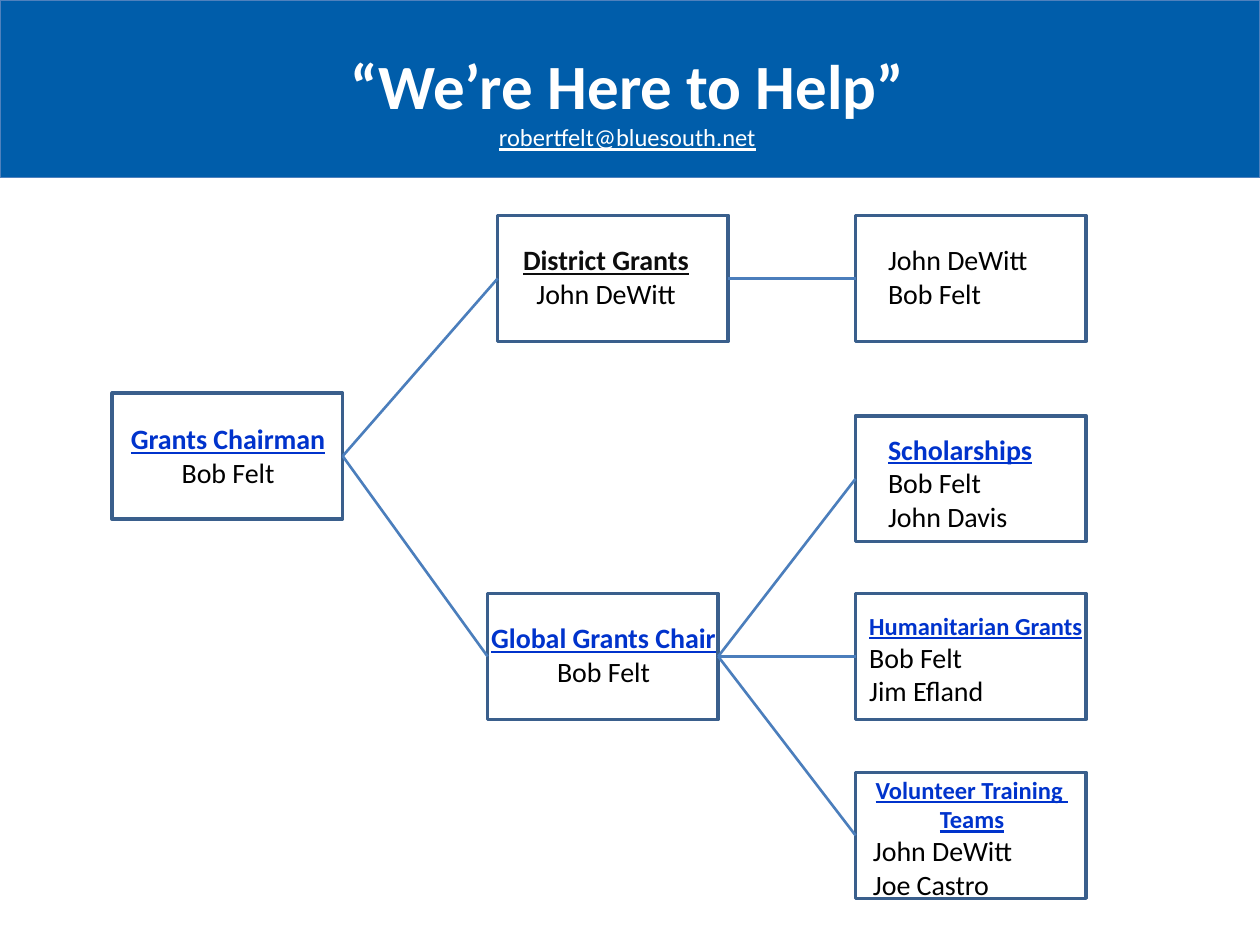
from dataclasses import dataclass

from lxml.etree import SubElement
from pptx import Presentation
from pptx.dml.color import RGBColor as Rgb
from pptx.enum.shapes import MSO_CONNECTOR as Conn, MSO_SHAPE as Shape
from pptx.enum.text import MSO_ANCHOR as Anchor, MSO_AUTO_SIZE as Fit, PP_ALIGN as Align
from pptx.oxml.ns import qn
from pptx.util import Inches, Pt


@dataclass(frozen=True)
class Theme:
    font: str = "Calibri"
    white: str = "FFFFFF"
    black: str = "000000"
    dark: str = "0D0D0D"
    link: str = "0033CC"
    band: str = "005DAA"
    rim: str = "4F81BD"
    edge: str = "3A5F8C"
    wire: str = "4B7EBC"
    title: int = 36
    body: int = 16
    small: int = 14


T = Theme()
LEFT, MID = Align.LEFT, Align.CENTER
WIDE, HIGH = 1.83, 1
RIGHT = 6.79


def write(para, text, size, color, bold=False, under=False):
    run = para.add_run()
    run.text = text
    font = run.font
    font.name, font.size = T.font, Pt(size)
    font.bold, font.underline = bold, under
    font.color.rgb = Rgb.from_string(color)


def rect(slide, box, fill, color, width):
    shape = slide.shapes.add_shape(Shape.RECTANGLE, *map(Inches, box))
    shape.shadow.inherit = False
    if fill:
        shape.fill.solid()
        shape.fill.fore_color.rgb = Rgb.from_string(fill)
    else:
        shape.fill.background()
    shape.line.color.rgb = Rgb.from_string(color)
    shape.line.width = Pt(width)
    return shape


def header(slide, box):
    x, y, w, h = box
    band = rect(slide, box, T.band, T.rim, 0.75)
    slide.shapes._spTree.insert(2, band._element)
    title = slide.shapes.title
    title.left, title.top = Inches(x + 0.48), Inches(y + 0.3)
    title.width, title.height = Inches(w - 1), Inches(1.25)
    frame = title.text_frame
    frame.auto_size = Fit.NONE
    frame.vertical_anchor = Anchor.TOP
    frame.margin_top = Inches(0.07)
    para = frame.paragraphs[0]
    para.alignment = MID
    write(para, "“We’re Here to Help”", T.title, T.white, bold=True)
    para.add_line_break()
    write(para, "robertfelt@bluesouth.net", T.small, T.white, under=True)


def label(slide, box, heads, names, size, color, aligns):
    text = slide.shapes.add_textbox(*map(Inches, box))
    frame = text.text_frame
    frame.word_wrap = False
    frame.auto_size = Fit.SHAPE_TO_FIT_TEXT
    rows = [(head, size, color, True, aligns[0]) for head in heads]
    rows += [(name, T.body, T.black, False, aligns[1]) for name in names]
    for i, (line, pts, tint, strong, align) in enumerate(rows):
        para = frame.add_paragraph() if i else frame.paragraphs[0]
        para.alignment = align
        write(para, line, pts, tint, strong, strong)


def node(slide, spot, area, heads, names, size=T.body, color=T.link, aligns=(LEFT, LEFT)):
    x, y = spot
    dx, dy, w, h = area
    shape = rect(slide, (x, y, WIDE, HIGH), None, T.edge, 2)
    label(slide, (x + dx, y + dy, w, h), heads, names, size, color, aligns)
    return shape


def join(slide, start, end):
    wire = slide.shapes.add_connector(Conn.STRAIGHT, 0, 0, 0, 0)
    wire.begin_connect(start, 3)
    wire.end_connect(end, 1)
    wire.line.color.rgb = Rgb.from_string(T.wire)
    wire.line.width = Pt(1.5)
    SubElement(wire._element.spPr, qn("a:effectLst"))


def chart(slide, box):
    x, y = box[:2]
    chair = node(slide, (x + 0.89, y + 1.71), (0.05, 0.18, 1.77, 0.64),
                 ["Grants Chairman"], ["Bob Felt"], aligns=(LEFT, MID))
    local = node(slide, (x + 3.95, y + 0.3), (0.09, 0.17, 1.54, 0.64),
                 ["District Grants"], ["John DeWitt"], color=T.dark, aligns=(MID, MID))
    world = node(slide, (x + 3.87, y + 3.3), (-0.07, 0.17, 2.01, 0.64),
                 ["Global Grants Chair"], ["Bob Felt"], aligns=(LEFT, MID))
    team = node(slide, (x + RIGHT, y + 0.3), (0.16, 0.17, 1.33, 0.64),
                [], ["John DeWitt", "Bob Felt"])
    study = node(slide, (x + RIGHT, y + 1.89), (0.16, 0.08, 1.53, 0.91),
                 ["Scholarships"], ["Bob Felt", "John Davis"])
    aid = node(slide, (x + RIGHT, y + 3.3), (0.01, 0.09, 1.91, 0.88),
               ["Humanitarian Grants"], ["Bob Felt", "Jim Efland"], size=T.small)
    train = node(slide, (x + RIGHT, y + 4.72), (0.04, -0.03, 1.77, 1.38),
                 ["Volunteer Training ", "Teams"], ["John DeWitt", "Joe Castro"],
                 size=T.small, aligns=(MID, LEFT))
    links = [(chair, (local, world)), (local, (team,)), (world, (aid, study, train))]
    for start, ends in links:
        for end in ends:
            join(slide, start, end)


def main():
    deck = Presentation()
    deck.slide_width, deck.slide_height = Inches(10), Inches(7.5)
    slide = deck.slides.add_slide(deck.slide_layouts[5])
    header(slide, (0, 0, 10, 1.41))
    chart(slide, (0, 1.41, 10, 6.09))
    deck.save("out.pptx")


if __name__ == "__main__":
    main()
